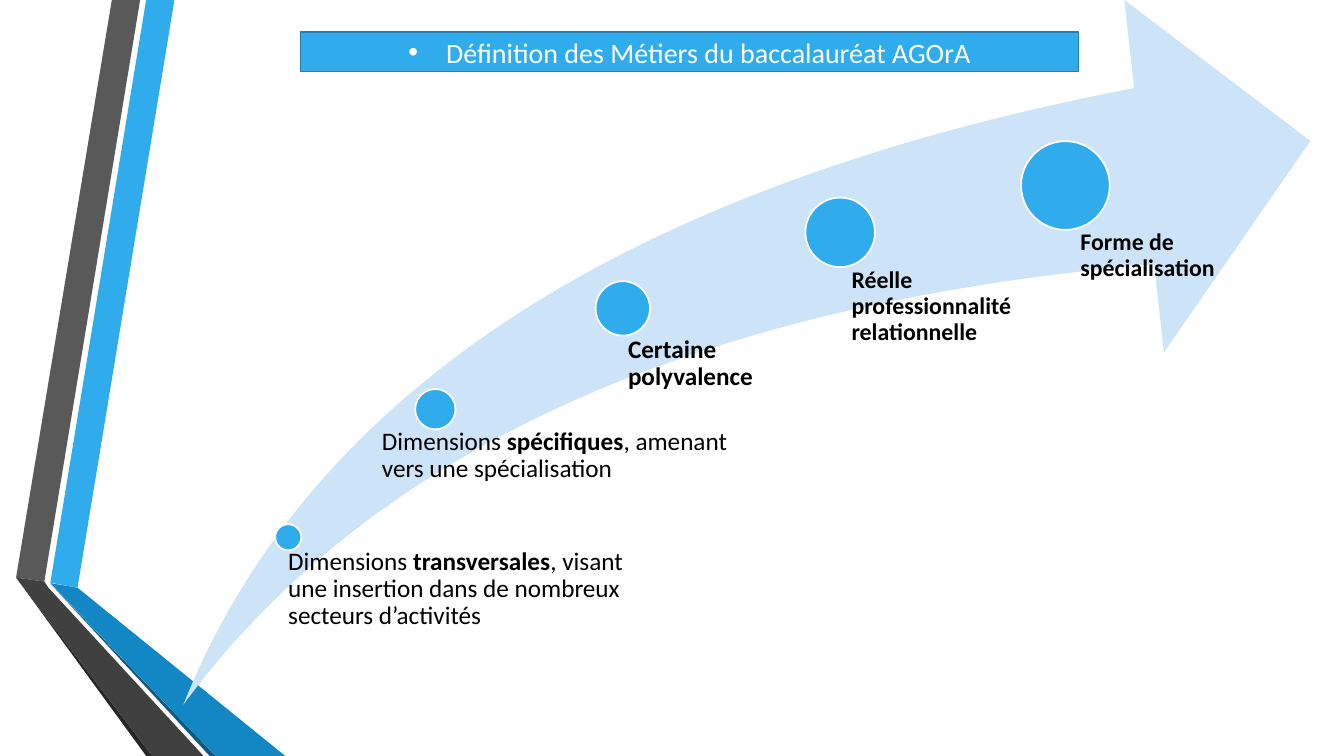
from lxml.etree import SubElement
from pptx import Presentation
from pptx.dml.color import RGBColor
from pptx.enum.shapes import MSO_SHAPE
from pptx.enum.text import MSO_ANCHOR, PP_ALIGN
from pptx.oxml.ns import qn
from pptx.util import Pt

SKY, WHITE, BLACK = "30ACEC", "FFFFFF", "000000"

RIBBONS = [
    (SKY, [(36, 416.2), (55.4, 419.8), (124.6, 0), (104.4, 0)]),
    ("595959", [(100.1, 0), (79.9, 0), (11.5, 412.6), (31.7, 415.4)]),
    ("262626", [(11.5, 412.6), (104.4, 540), (108.7, 540)]),
    ("0C5A82", [(36, 416.9), (149.8, 540), (154.1, 540)]),
    ("1287C3", [(36, 416.5), (154.1, 540), (203.8, 540), (55.4, 419.8)]),
    ("404040", [(145.4, 540), (34.6, 419.8), (31.7, 415.4), (11.5, 412.6), (108.7, 540)]),
]

# dot (centre x, centre y, diameter), label (left, top, width, height), inset, size, align, runs
MILESTONES = [
    ((74.9, 383.8, 18.7), (64.8, 391.7, 266.4, 90), 10.1, 18, PP_ALIGN.LEFT,
     [("Dimensions ", False), ("transversales", True),
      (", visant une insertion dans de nombreux secteurs d’activités", False)]),
    ((180, 292.3, 28.8), (126.7, 306, 262.8, 67), 15.1, 18, PP_ALIGN.LEFT,
     [("Dimensions ", False), ("spécifiques", True),
      (", amenant vers une spécialisation", False)]),
    ((313.9, 220.3, 38.9), (297.4, 240.5, 155.5, 40.3), 20.2, 18, PP_ALIGN.JUSTIFY,
     [("Certaine polyvalence", True)]),
    ((469.1, 166, 49.7), (450.7, 191.5, 161.3, 57.6), 26.6, 17, PP_ALIGN.JUSTIFY,
     [("Réelle professionnalité relationnelle", True)]),
    ((630, 132.5, 63.4), (607, 164.2, 161.3, 59.8), 33.8, 17, PP_ALIGN.LEFT,
     [("Forme de spécialisation", True)]),
]


def color(hex_code):
    return RGBColor.from_string(hex_code)


def paint(shape, fill, line=None):
    shape.shadow.inherit = False
    shape.fill.solid()
    shape.fill.fore_color.rgb = color(fill)
    if line:
        shape.line.color.rgb = color(line)
        shape.line.width = Pt(1.25)
    else:
        shape.line.fill.background()


def set_font(paragraph, size, hex_code):
    paragraph.font.name = "Calibri"
    paragraph.font.size = Pt(size)
    paragraph.font.color.rgb = color(hex_code)


def add_ribbons(slide, left, top):
    for fill, corners in RIBBONS:
        start, *others = [(Pt(left + x), Pt(top + y)) for x, y in corners]
        outline = slide.shapes.build_freeform(*start)
        outline.add_line_segments(others, close=True)
        paint(outline.convert_to_shape(), fill)


def add_label(slide, left, top, width, height, inset, size, align, runs):
    frame = slide.shapes.add_textbox(Pt(left), Pt(top), Pt(width), Pt(height)).text_frame
    frame.word_wrap = True
    frame.margin_left = Pt(inset)
    frame.margin_top = frame.margin_right = frame.margin_bottom = 0
    sentence = frame.paragraphs[0]
    sentence.alignment = align
    sentence.line_spacing = 0.9
    set_font(sentence, size, BLACK)
    for words, bold in runs:
        run = sentence.add_run()
        run.text = words
        run.font.bold = bold


def add_path(slide, left, top, width, height):
    swoosh = slide.shapes.add_shape(
        MSO_SHAPE.SWOOSH_ARROW, Pt(left), Pt(top), Pt(width), Pt(height))
    swoosh.adjustments[0] = swoosh.adjustments[1] = 0.25
    paint(swoosh, "CDE3F8")
    for (x, y, size), (label_x, label_y, label_w, label_h), *wording in MILESTONES:
        dot = slide.shapes.add_shape(
            MSO_SHAPE.OVAL, Pt(left + x - size / 2), Pt(top + y - size / 2), Pt(size), Pt(size))
        paint(dot, SKY, WHITE)
        add_label(slide, left + label_x, top + label_y, label_w, label_h, *wording)


def add_title(slide, left, top, width, height):
    banner = slide.shapes.add_shape(
        MSO_SHAPE.RECTANGLE, Pt(left), Pt(top), Pt(width), Pt(height))
    paint(banner, SKY, "247FAF")
    banner.text_frame.word_wrap = True
    banner.text_frame.vertical_anchor = MSO_ANCHOR.MIDDLE
    title = banner.text_frame.paragraphs[0]
    title.text = "Définition des Métiers du baccalauréat AGOrA"
    title.alignment = PP_ALIGN.CENTER
    set_font(title, 20, WHITE)
    properties = title._p.get_or_add_pPr()
    properties.set("marL", str(Pt(27)))
    properties.set("indent", str(-Pt(27)))
    bullet_font = SubElement(properties, qn("a:buFont"), typeface="Arial")
    bullet_font.addnext(properties.makeelement(qn("a:buChar"), {"char": "•"}))
    defaults = properties.find(qn("a:defRPr"))
    if defaults is not None:
        properties.append(defaults)


def main():
    deck = Presentation()
    deck.slide_width, deck.slide_height = Pt(960), Pt(540)
    slide = deck.slides.add_slide(deck.slide_layouts[6])
    add_ribbons(slide, 0, 0)
    add_path(slide, 131, 0, 805, 503.3)
    add_title(slide, 214.6, 23, 555.8, 28.1)
    deck.save("out.pptx")


if __name__ == "__main__":
    main()
